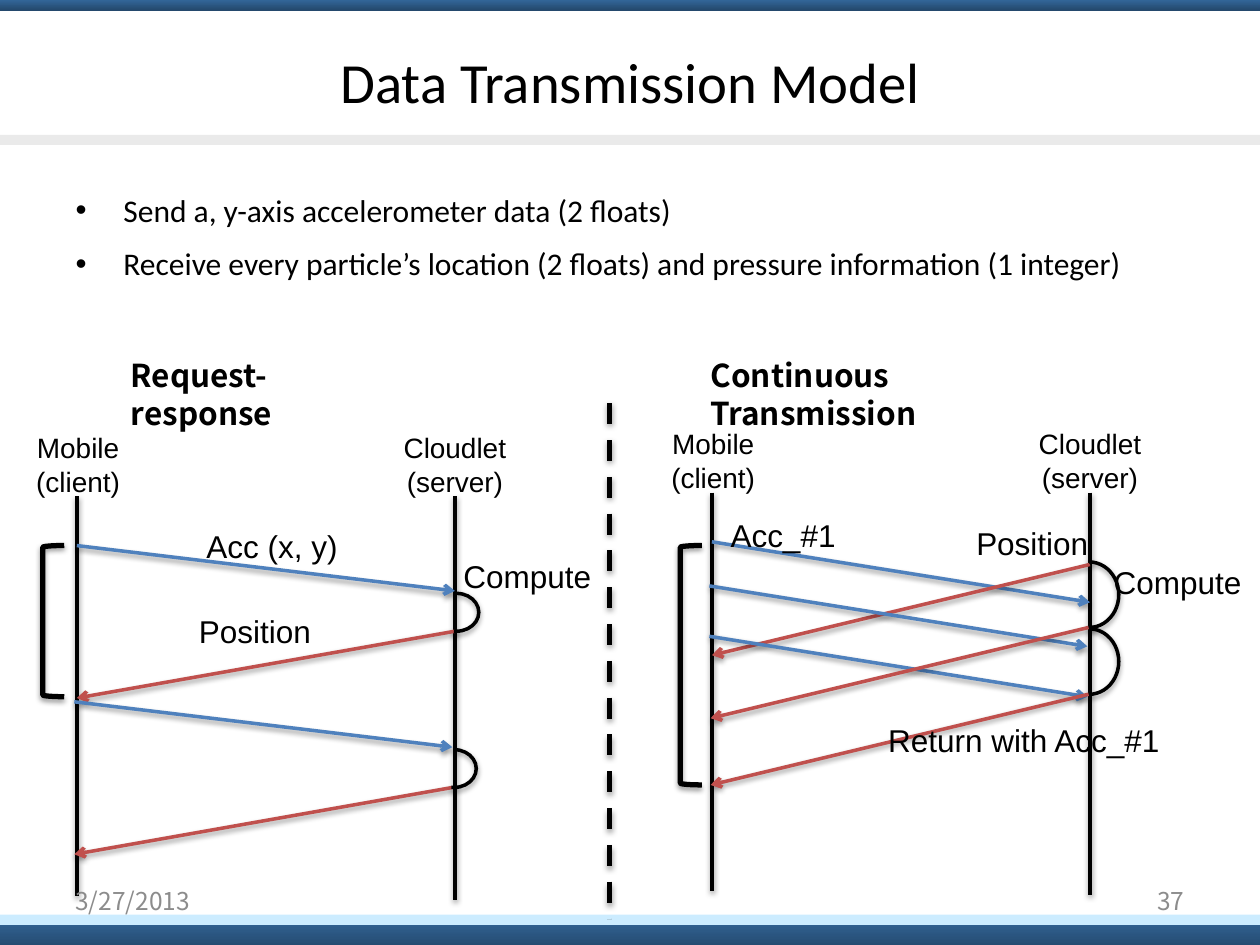
from lxml import etree
from pptx import Presentation
from pptx.dml.color import RGBColor
from pptx.enum.dml import MSO_LINE
from pptx.enum.shapes import MSO_CONNECTOR, MSO_SHAPE
from pptx.enum.text import MSO_ANCHOR, MSO_AUTO_SIZE, PP_ALIGN
from pptx.oxml import parse_xml
from pptx.oxml.ns import nsdecls, qn
from pptx.util import Inches, Pt

STRAIGHT = MSO_CONNECTOR.STRAIGHT
RECTANGLE, ARC, BRACKET = MSO_SHAPE.RECTANGLE, MSO_SHAPE.ARC, MSO_SHAPE.LEFT_BRACKET
LEFT, CENTER, RIGHT = PP_ALIGN.LEFT, PP_ALIGN.CENTER, PP_ALIGN.RIGHT
MIDDLE, TOP = MSO_ANCHOR.MIDDLE, MSO_ANCHOR.TOP
FIT, FIXED = MSO_AUTO_SIZE.SHAPE_TO_FIT_TEXT, MSO_AUTO_SIZE.NONE
BLACK, BLUE, RED, GRAY = "000000", "4F81BD", "C0504D", "8C8C8C"
HEADING_FONT = "Noto Sans CJK KR"
color = RGBColor.from_string

deck = Presentation()
deck.slide_width, deck.slide_height = Inches(10), Inches(7.5)
CELL = deck.slide_width // 100
page = deck.slides.add_slide(deck.slide_layouts[1])


def grid(*cells):
    return [round(cell * CELL) for cell in cells]


def stroke(item, shade, width, arrow=False):
    item.line.color.rgb = color(shade)
    item.line.width = Pt(width)
    if arrow:
        etree.SubElement(item.line._get_or_add_ln(), qn("a:tailEnd"), type="arrow")
    item._element.spPr.append(parse_xml(
        f'<a:effectLst {nsdecls("a")}><a:outerShdw blurRad="39400" dist="20300" dir="5400000" '
        'rotWithShape="0"><a:srgbClr val="000000"><a:alpha val="38000"/></a:srgbClr>'
        '</a:outerShdw></a:effectLst>'))


bands = [(72.8, 2.5, None), (72.6, 0.8, "CCECFF"), (10.7, 0.8, "EAEAEA"), (0, 0.8, None)]
for top, height, shade in bands:
    band = page.shapes.add_shape(RECTANGLE, *grid(0, top, 100, height))
    band.shadow.inherit = False
    band.line.fill.background()
    if shade:
        band.fill.solid()
        band.fill.fore_color.rgb = color(shade)
    else:
        band.fill.gradient()
        band.fill.gradient_angle = 270
        for stop, stop_shade in zip(band.fill.gradient_stops, ("336699", "24496D")):
            stop.color.rgb = color(stop_shade)

title, body = page.shapes.title, page.placeholders[1]
title.left, title.top, title.width, title.height = grid(5, 3, 90, 6.9)
body.left, body.top, body.width, body.height = grid(5, 13.9, 90, 11.8)
title.text_frame.text = "Data Transmission Model"
title.text_frame.vertical_anchor = MIDDLE
body.text_frame.text = (
    "Send a, y-axis accelerometer data (2 floats)\n"
    "Receive every particle’s location (2 floats) and pressure information (1 integer)")
for box, size in ((title, 32.4), (body, 18)):
    box.text_frame.auto_size = FIXED
    for para in box.text_frame.paragraphs:
        font = para.runs[0].font
        font.name, font.size, font.color.rgb = "Calibri", Pt(size), color(BLACK)
title.text_frame.paragraphs[0].alignment = CENTER
for para in body.text_frame.paragraphs:
    para.line_spacing, para.space_before = 1.25, Pt(3.6)
    properties = para._p.get_or_add_pPr()
    properties.set("marL", str(Inches(0.38)))
    properties.set("indent", str(-Inches(0.38)))
    etree.SubElement(properties, qn("a:buChar"), char="•")

labels = []
SPAN = 30
panels = [(6.1, 39.4, (31.7, 32)), (56.5, 39.1, (31.6, 31.9))]
for client, top, lengths in panels:
    for x, length in zip((client, client + SPAN), lengths):
        lifeline = page.shapes.add_connector(STRAIGHT, *grid(x, top, x, top + length))
        stroke(lifeline, BLACK, 2)
    labels += [("Mobile\v(client)", client - 4.3, top - 5.7, 8.8),
               ("Cloudlet\v(server)", client + SPAN - 5.1, top - 5.7, 10.2)]

divider = page.shapes.add_connector(STRAIGHT, *grid(48.4, 32, 48.4, 72.9))
stroke(divider, BLACK, 3)
divider.line.dash_style = MSO_LINE.DASH

messages, computes = [], []
for client, start in ((6.1, 43.3), (5.9, 55.7)):
    messages += [(client, start, 3.6, BLUE), (client, start + 6.8, 5.3, RED)]
    computes.append((client + 28.4, start + 3.8, 3.5, 3, 59.17))
messages += [(56.5, 43, 4.8, BLUE), (56.5, 44.8, 7.2, RED),
             (56.3, 46.5, 4.8, BLUE), (56.3, 50.5, 4.8, BLUE),
             (56.4, 49.8, 7.2, RED), (56.4, 55.1, 7.2, RED)]
computes += [(84.1, top, 4.7, 5.2, 53.9) for top in (44.6, 49.9)]

for client, start, drop, shade in messages:
    ends = (client, client + SPAN) if shade == BLUE else (client + SPAN, client)
    message = page.shapes.add_connector(
        STRAIGHT, *grid(ends[0], start, ends[1], start + drop))
    stroke(message, shade, 2, arrow=True)

for left, top, width, height, sweep_end in computes:
    compute = page.shapes.add_shape(ARC, *grid(left, top, width, height))
    compute.adjustments[0], compute.adjustments[1] = 162, sweep_end
    compute.fill.background()
    stroke(compute, BLACK, 2)

for left, height in ((3.4, 12), (54, 19)):
    bracket = page.shapes.add_shape(BRACKET, *grid(left, 43.3, 1.7, height))
    bracket.fill.background()
    stroke(bracket, BLACK, 3)

notes = [("Acc (x, y)", 15.4, 41.3, 12.5), ("Position", 14.8, 48.1, 11),
         ("Compute", 35.8, 43.7, 12.3), ("Acc_#1", 57, 40.5, 10.4),
         ("Position", 76.5, 41.1, 11), ("Compute", 87.4, 44.2, 12.3),
         ("Return with Acc_#1", 69.5, 56.7, 23.8)]
headings = [("Request-response", 9.4, 27.8, 23.3),
            ("Continuous Transmission", 55.4, 27.8, 32.2)]
footers = [("3/27/2013", 5, 69.5, 23.3)]
numbers = [("37", 71.7, 69.5, 23.3)]
groups = [(labels, 6.4, 16, "Arial", BLACK, CENTER, False, FIT, TOP),
          (notes, 4, 18, "Arial", BLACK, LEFT, False, FIT, TOP),
          (headings, 4, 18, HEADING_FONT, BLACK, LEFT, True, FIT, TOP),
          (footers, 4, 14, HEADING_FONT, GRAY, LEFT, True, FIXED, MIDDLE),
          (numbers, 4, 14, HEADING_FONT, GRAY, RIGHT, True, FIXED, MIDDLE)]
for texts, height, size, face, shade, alignment, wrap, sizing, anchor in groups:
    for text, left, top, width in texts:
        box = page.shapes.add_textbox(*grid(left, top, width, height))
        frame = box.text_frame
        frame.text = text
        frame.word_wrap, frame.auto_size, frame.vertical_anchor = wrap, sizing, anchor
        para = frame.paragraphs[0]
        para.alignment = alignment
        for span in para.runs:
            span.font.name, span.font.size = face, Pt(size)
            span.font.color.rgb = color(shade)
            span.font.bold = texts is headings

deck.save("out.pptx")
